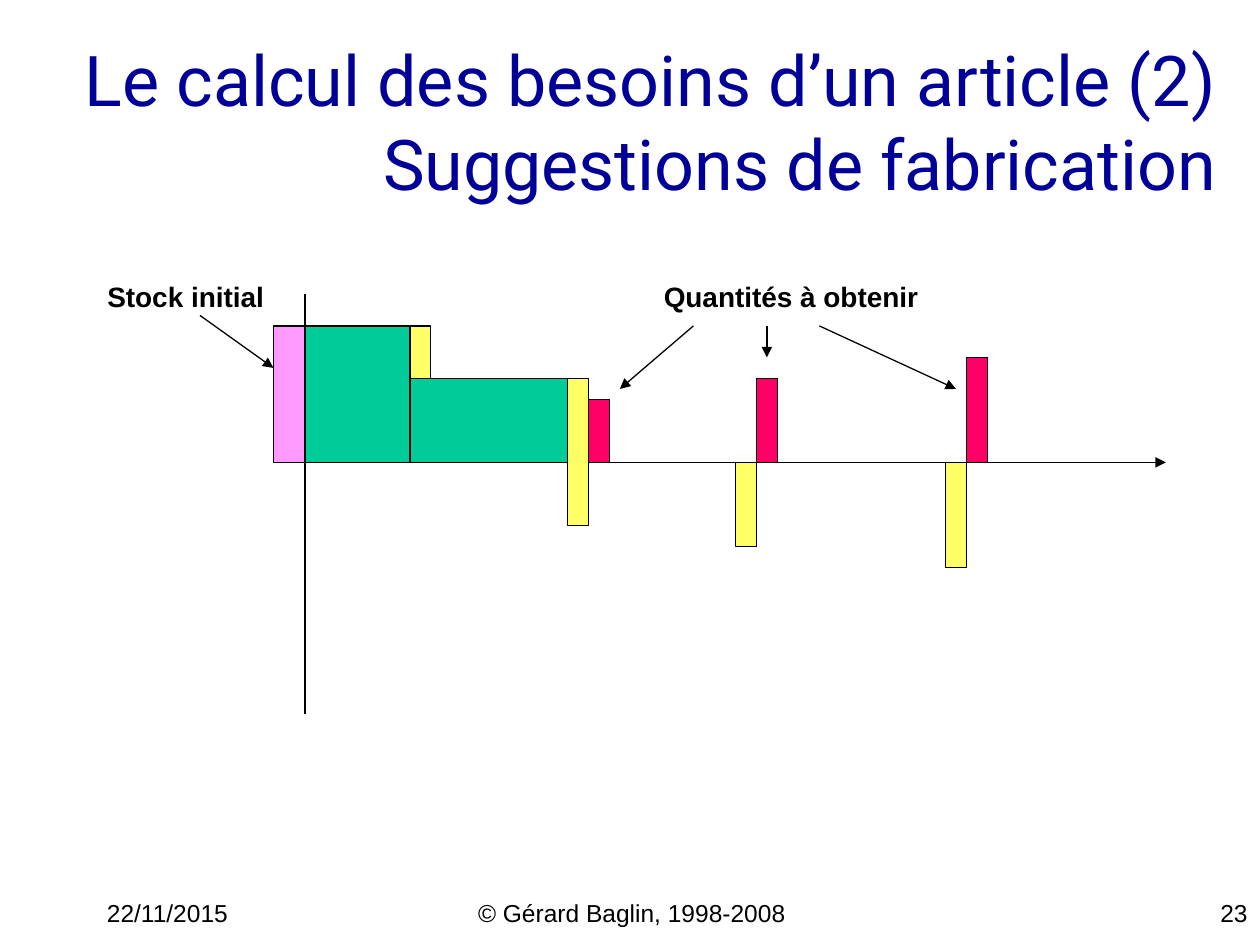
from lxml import etree
from pptx import Presentation
from pptx.dml.color import RGBColor
from pptx.enum import shapes, text
from pptx.oxml import ns
from pptx.util import Inches, Pt

BLACK, NAVY = "000000", "000099"
PINK, GREEN, YELLOW, RED = "FF99FF", "00CC99", "FFFF66", "FF0066"
ALIGN = text.PP_ALIGN


def paint(color_format, color):
    color_format.rgb = RGBColor.from_string(color)


def format_para(para, size, font="Arial", color=BLACK, bold=False, align=ALIGN.LEFT):
    para.alignment = align
    para.font.size = Pt(size)
    para.font.name = font
    para.font.bold = bold
    paint(para.font.color, color)


def add_text(page, box, words, size, wrap=True, **style):
    frame = page.shapes.add_textbox(*map(Inches, box)).text_frame
    frame.word_wrap = wrap
    frame.text = words
    format_para(frame.paragraphs[0], size, **style)


def add_title(page, box, words):
    title = page.shapes.title
    title.left, title.top, title.width, title.height = map(Inches, box)
    frame = title.text_frame
    frame.text = words
    frame.vertical_anchor = text.MSO_ANCHOR.MIDDLE
    frame.auto_size = text.MSO_AUTO_SIZE.NONE
    format_para(frame.paragraphs[0], 40, "Roboto", NAVY, align=ALIGN.RIGHT)


def add_footer(page, box):
    left, top, width, height = box
    side, middle = 2.08, 3.17
    parts = [
        (0, side, "22/11/2015", ALIGN.LEFT),
        ((width - side + side - middle) / 2 - 0.37 + 0.01, middle,
         "© Gérard Baglin, 1998-2008", ALIGN.CENTER),
        (width - side, side, "23", ALIGN.RIGHT),
    ]
    for offset, part_width, words, align in parts:
        add_text(page, (left + offset, top, part_width, height), words, 14, align=align)


def add_stock_diagram(page, origin):
    """Draw the stock over time; positions are in twelfths of an inch, y upwards."""

    def place(x, y):
        return origin[0] + x / 12, origin[1] - y / 12

    def add_line(start, end, arrow=True):
        ends = [Inches(value) for value in (*place(*start), *place(*end))]
        line = page.shapes.add_connector(shapes.MSO_CONNECTOR.STRAIGHT, *ends)
        line.line.width = Pt(0.75)
        paint(line.line.color, BLACK)
        if arrow:
            etree.SubElement(line.line._get_or_add_ln(), ns.qn("a:tailEnd"), type="triangle")
        etree.SubElement(line._element.spPr, ns.qn("a:effectLst"))

    def add_bar(x, base, width, height, color):
        box = (*place(x, base + height), width / 12, height / 12)
        bar = page.shapes.add_shape(shapes.MSO_SHAPE.RECTANGLE, *map(Inches, box))
        bar.shadow.inherit = False
        bar.fill.solid()
        paint(bar.fill.fore_color, color)
        bar.line.width = Pt(0.75)
        paint(bar.line.color, BLACK)

    # Axes
    add_line((0, 0), (82, 0))
    add_line((0, 16), (0, -24), arrow=False)

    # Stock levels, needs and quantities to obtain: x, base, width, height
    bars = [
        (-3, 0, 3, 13, PINK),
        (0, 0, 10, 13, GREEN),
        (10, 0, 15, 8, GREEN),
        (10, 8, 2, 5, YELLOW),
        (25, -6, 2, 14, YELLOW),
        (27, 0, 2, 6, RED),
    ]
    for x, need in ((41, 8), (61, 10)):
        bars += [(x, -need, 2, need, YELLOW), (x + 2, 0, 2, need, RED)]
    for bar in bars:
        add_bar(*bar)

    # Labels and their arrows
    for x, width, words in ((-20, 1.45, "Stock initial"), (33, 2.23, "Quantités à obtenir")):
        add_text(page, (*place(x, 18), width, 0.37), words, 16, wrap=False, bold=True)
    for start, end in (
        ((-10, 14), (-3, 9)),
        ((37, 13), (30, 7)),
        ((44, 13), (44, 10)),
        ((49, 13), (62, 7)),
    ):
        add_line(start, end)


def main():
    deck = Presentation()
    deck.slide_width, deck.slide_height = Inches(10), Inches(7.5)
    page = deck.slides.add_slide(deck.slide_layouts.get_by_name("Title Only"))
    add_title(page, (0, 0.33, 9.75, 1.25),
              "Le calcul des besoins d’un article (2)\vSuggestions de fabrication")
    add_stock_diagram(page, (2.42, 3.67))
    add_footer(page, (0.75, 7.08, 9.25, 0.25))
    deck.save("out.pptx")


if __name__ == "__main__":
    main()
